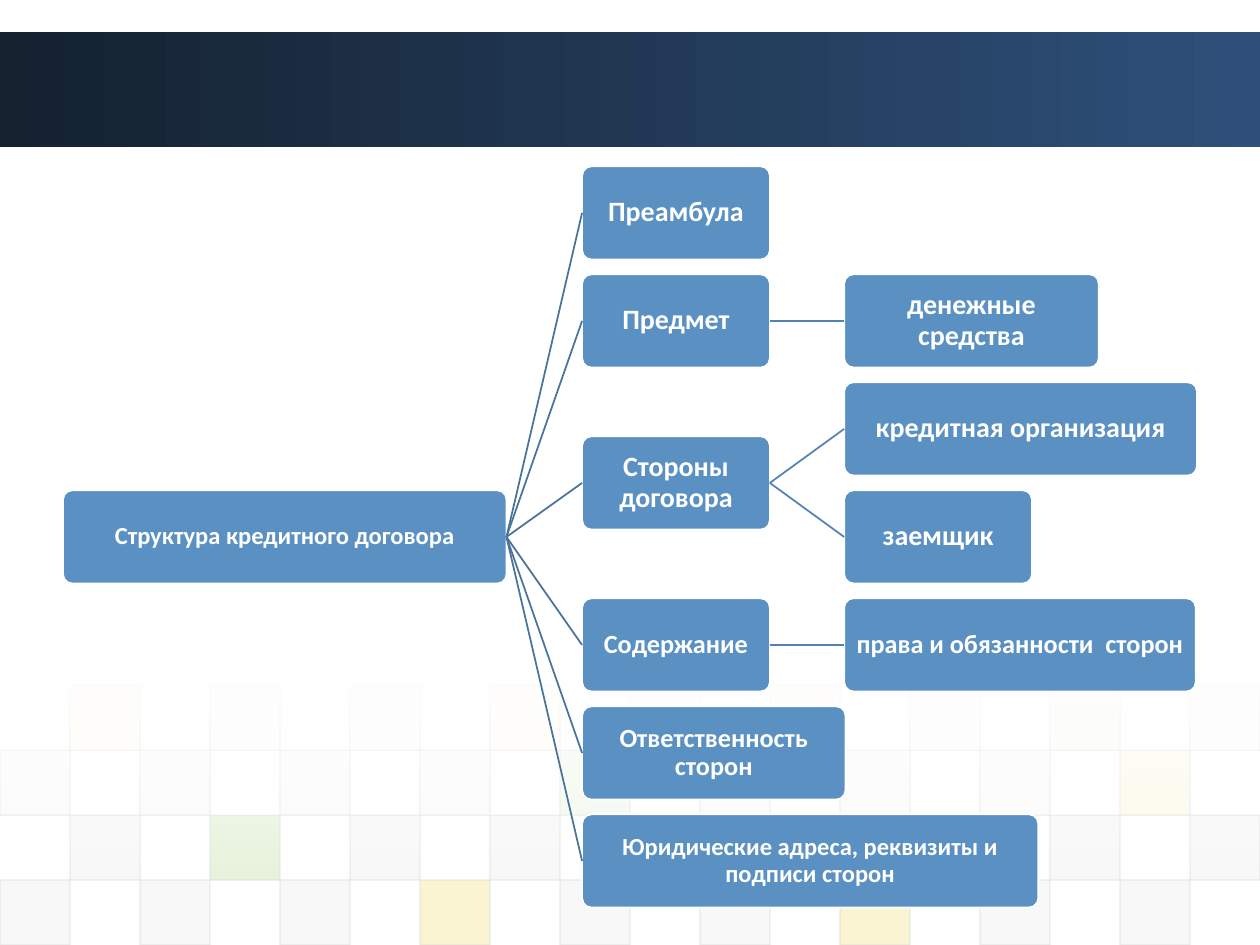
from lxml import etree
from pptx import Presentation
from pptx.dml.color import RGBColor
from pptx.enum.shapes import MSO_CONNECTOR, MSO_SHAPE
from pptx.enum.text import MSO_ANCHOR, PP_ALIGN
from pptx.oxml.ns import qn
from pptx.util import Inches, Pt

RECT, ROUNDED = MSO_SHAPE.RECTANGLE, MSO_SHAPE.ROUNDED_RECTANGLE
STRAIGHT = MSO_CONNECTOR.STRAIGHT
CENTER, MIDDLE = PP_ALIGN.CENTER, MSO_ANCHOR.MIDDLE
RIGHT_SIDE, LEFT_SIDE = 3, 1

WHITE = RGBColor(0xFF, 0xFF, 0xFF)
NAVY_DARK = RGBColor(0x14, 0x21, 0x2F)
NAVY = RGBColor(0x2E, 0x50, 0x7A)
BOX_BLUE = RGBColor(0x5A, 0x90, 0xC2)
ROOT_LINE = RGBColor(0x48, 0x73, 0x9B)
BRANCH_LINE = RGBColor(0x52, 0x83, 0xB0)
TILE_LINE = RGBColor(0xDD, 0xDD, 0xDD)
TILE_COLORS = {
    "D": TILE_LINE,
    "E": RGBColor(0xEA, 0xEA, 0xEA),
    "G": RGBColor(0x8A, 0xC2, 0x46),
    "Y": RGBColor(0xEF, 0xC8, 0x21),
}


def add_box(kind, left, top, width, height):
    sp = slide.shapes.add_shape(kind, Inches(left), Inches(top),
                                Inches(width), Inches(height))
    sp.shadow.inherit = False
    return sp


def set_alpha(element, *percents):
    """Give the RGB colours inside element these opacities, in order."""
    for color, percent in zip(element.iter(qn("a:srgbClr")), percents):
        etree.SubElement(color, qn("a:alpha")).set("val", str(percent * 1000))


prs = Presentation()
prs.slide_width, prs.slide_height = Inches(10), Inches(7.5)
slide = prs.slides.add_slide(prs.slide_layouts[6])

# Header band and the white veil over the tiles
band = add_box(RECT, 0, 0.25, 10, 0.92)
band.fill.gradient()
band.fill.gradient_angle = 0
for stop, color in zip(band.fill.gradient_stops, (NAVY_DARK, NAVY)):
    stop.color.rgb = color
band.line.fill.background()

# Checkerboard: first column, tile colours of every second column, opacity
TILE_W, TILE_H, TILES_TOP = 10 / 18, 0.515, 5.44
tile_rows = [
    (1, "YEEYDYEGE", 5),
    (0, "DDDDGDDDY", 10),
    (1, "DGDDDDGDD", 20),
    (0, "DDDYDDYDD", 20),
]
for row, (first, codes, opacity) in enumerate(tile_rows):
    for i, code in enumerate(codes):
        tile = add_box(RECT, (first + 2 * i) * TILE_W, TILES_TOP + row * TILE_H,
                       TILE_W, TILE_H)
        tile.fill.solid()
        tile.fill.fore_color.rgb = TILE_COLORS[code]
        tile.line.color.rgb = TILE_LINE
        tile.line.width = Pt(0.75)
        set_alpha(tile._element.spPr, opacity, 60)

veil = add_box(RECT, 0, 5.37, 10, 1.62)
veil.fill.gradient()
veil.fill.gradient_angle = 270
for stop in veil.fill.gradient_stops:
    stop.color.rgb = WHITE
set_alpha(veil._element.spPr, 90, 0)
veil.line.fill.background()

# Tree: text, level, row, width, font size, index of the parent
LEVEL_LEFT = (0.5, 4.62, 6.7)
TREE_TOP, ROW_STEP, BOX_H = 1.32, 6 / 7, 0.74
nodes = [
    ("Структура кредитного договора", 0, 3, 3.52, 14, None),
    ("Преамбула", 1, 0, 1.49, 16, 0),
    ("Предмет", 1, 1, 1.49, 16, 0),
    ("денежные средства", 2, 1, 2.02, 16, 2),
    ("Стороны договора", 1, 2.5, 1.49, 16, 0),
    ("кредитная организация", 2, 2, 2.8, 16, 4),
    ("заемщик", 2, 3, 1.49, 16, 4),
    ("Содержание", 1, 4, 1.49, 15, 0),
    ("права и обязанности  сторон", 2, 4, 2.79, 15, 7),
    ("Ответственность сторон", 1, 5, 2.09, 15, 0),
    ("Юридические адреса, реквизиты и подписи сторон", 1, 6, 3.62, 14, 0),
]
boxes = []
for text, level, row, width, size, parent in nodes:
    sp = add_box(ROUNDED, LEVEL_LEFT[level], TREE_TOP + row * ROW_STEP,
                 width, BOX_H)
    sp.adjustments[0] = 0.1
    sp.fill.solid()
    sp.fill.fore_color.rgb = BOX_BLUE
    sp.line.color.rgb = WHITE
    sp.line.width = Pt(1)
    tf = sp.text_frame
    tf.word_wrap = True
    tf.vertical_anchor = MIDDLE
    tf.margin_left = tf.margin_right = Inches(0.03)
    tf.margin_top = tf.margin_bottom = Inches(0.03)
    tf.text = text
    p = tf.paragraphs[0]
    p.alignment = CENTER
    p.line_spacing = 0.9
    font = p.runs[0].font
    font.name, font.size, font.bold = "Calibri", Pt(size), True
    font.color.rgb = WHITE
    boxes.append(sp)

    if parent is not None:
        link = slide.shapes.add_connector(STRAIGHT, 0, 0, 0, 0)
        link.begin_connect(boxes[parent], RIGHT_SIDE)
        link.end_connect(sp, LEFT_SIDE)
        link.line.color.rgb = ROOT_LINE if parent == 0 else BRANCH_LINE
        link.line.width = Pt(1)
        etree.SubElement(link._element.spPr, qn("a:effectLst"))

prs.save("out.pptx")
